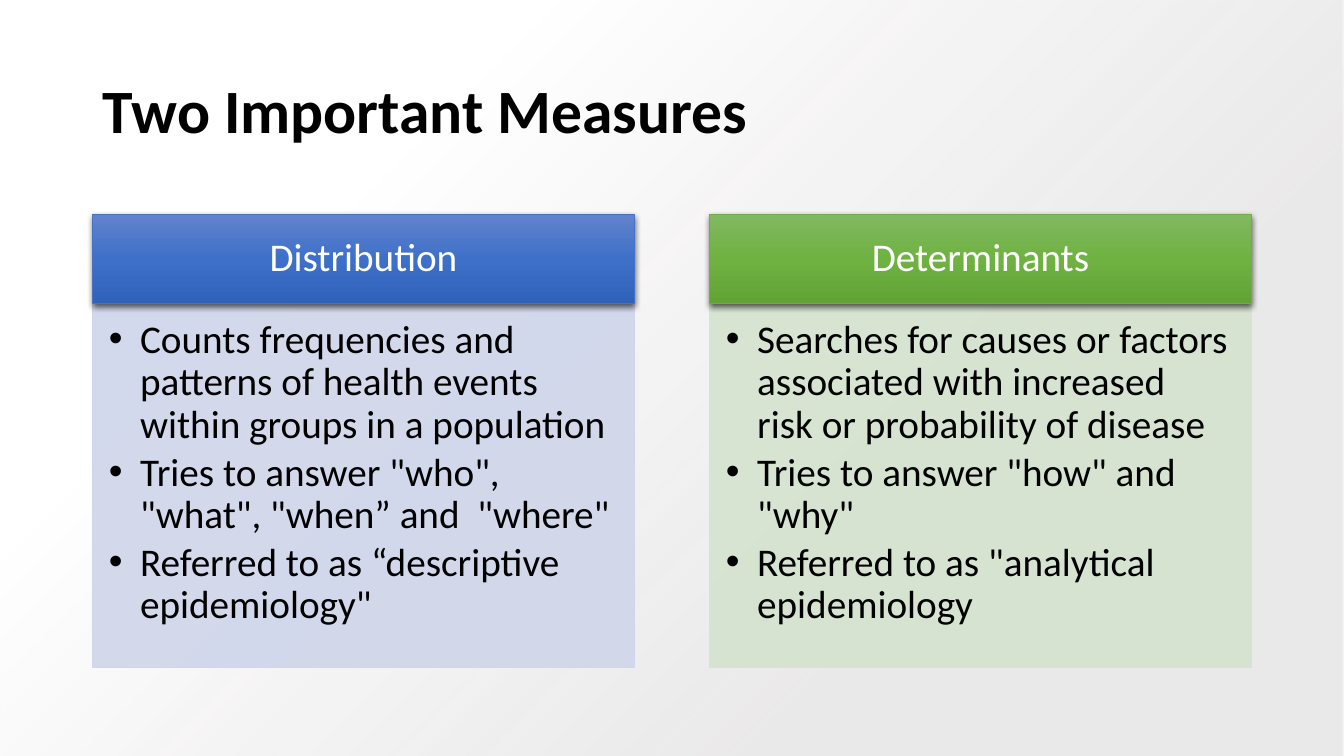
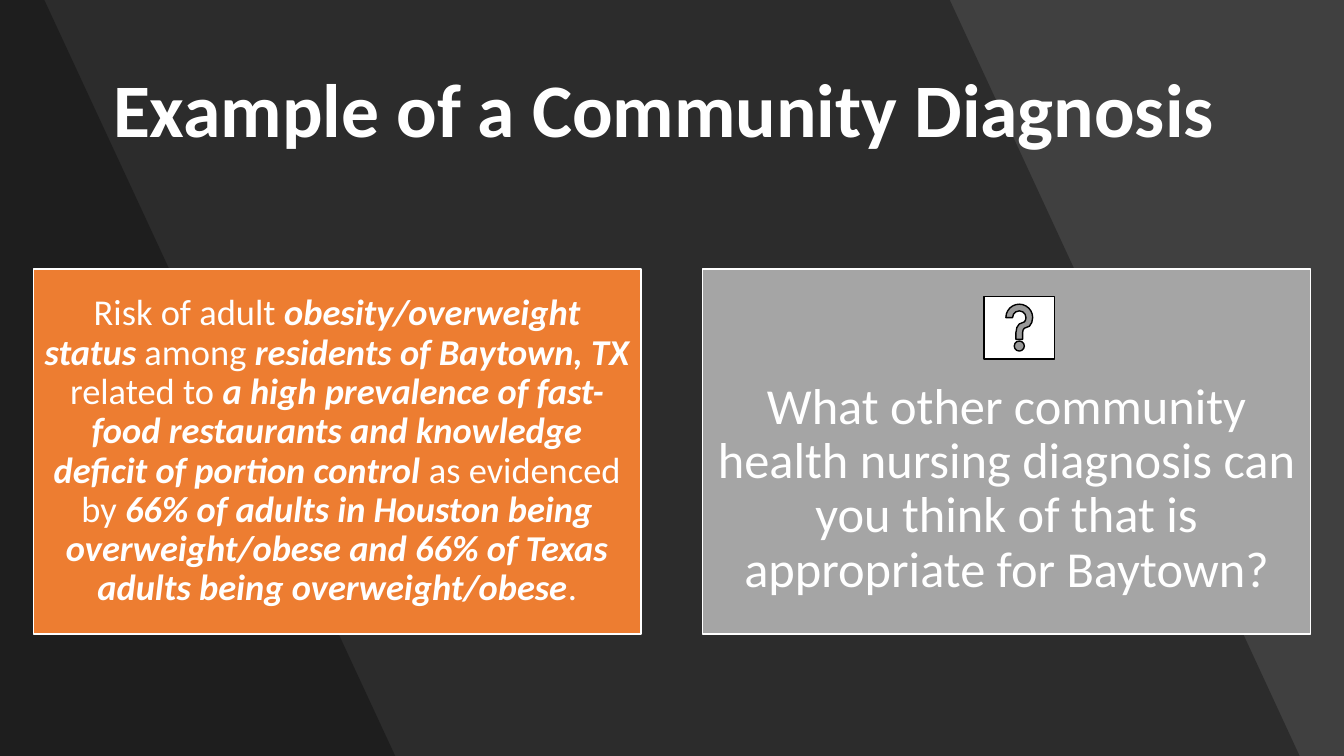
from dataclasses import dataclass

from lxml import etree
from pptx import Presentation
from pptx.dml.color import RGBColor
from pptx.enum.shapes import MSO_SHAPE as Preset
from pptx.enum.text import MSO_ANCHOR as Anchor, MSO_AUTO_SIZE as AutoSize, PP_ALIGN as Align
from pptx.oxml import parse_xml
from pptx.oxml.ns import nsdecls, qn
from pptx.util import Inches, Pt


@dataclass(frozen=True)
class Theme:
    font: str = "Calibri"
    black: str = "000000"
    white: str = "FFFFFF"
    mist: str = "E7E6E6"
    charcoal: str = "404040"
    orange: str = "ED7D31"
    gray: str = "A5A5A5"
    # Each column: header gradient, header line, body fill
    blue: tuple = (("6183CB", "3E70CA", "3062BB"), "4472C4", "CFD5EA")
    green: tuple = (("81B861", "6FB242", "62A336"), "70AD47", "D5E3CF")
    title_size: int = 44
    large_title_size: int = 54
    body_size: int = 28
    card_size: int = 26
    question_size: int = 36


THEME = Theme()
WIDTH, HEIGHT = 13.33, 7.5


def write(shape, paragraphs, size, color, bold=False, align=Align.LEFT,
          anchor=Anchor.MIDDLE, insets=(0.1, 0.05, 0.1, 0.05), after=0, hanging=None):
    """Fill a shape with paragraphs; odd pieces of a tuple are bold italic."""
    frame = shape.text_frame
    frame.auto_size = AutoSize.NONE
    frame.word_wrap = True
    frame.vertical_anchor = anchor
    (frame.margin_left, frame.margin_top,
     frame.margin_right, frame.margin_bottom) = map(Inches, insets)
    for index, pieces in enumerate(paragraphs):
        paragraph = frame.add_paragraph() if index else frame.paragraphs[0]
        paragraph.alignment = align
        paragraph.line_spacing = 0.9
        paragraph.space_before = Pt(0)
        paragraph.space_after = Pt(after)
        if hanging:
            properties = paragraph._p.get_or_add_pPr()
            properties.set("marL", str(Inches(hanging)))
            properties.set("indent", str(-Inches(hanging)))
        pieces = (pieces,) if isinstance(pieces, str) else pieces
        for number, text in enumerate(pieces):
            emphasised = number % 2 == 1
            run = paragraph.add_run()
            run.text = text
            font = run.font
            font.name, font.size = THEME.font, Pt(size)
            font.bold, font.italic = bold or emphasised, emphasised
            font.color.rgb = RGBColor.from_string(color)


class Deck:
    def __init__(self):
        self.presentation = Presentation()
        self.presentation.slide_width = Inches(WIDTH)
        self.presentation.slide_height = Inches(HEIGHT)
        self.slide = None

    def add_slide(self, layout, background):
        layouts = self.presentation.slide_layouts
        self.slide = self.presentation.slides.add_slide(layouts.get_by_name(layout))
        fill = self.slide.background.fill
        fill.solid()
        fill.fore_color.rgb = RGBColor.from_string(background)

    def place(self, shape, left, top, width, height):
        shape.left, shape.top = Inches(left), Inches(top)
        shape.width, shape.height = Inches(width), Inches(height)

    def paint(self, shape, fill, line=None, weight=0.5, opacity=100):
        shape.fill.solid()
        shape.fill.fore_color.rgb = RGBColor.from_string(fill)
        if opacity < 100:
            color = shape._element.spPr.find(qn("a:solidFill"))[0]
            etree.SubElement(color, qn("a:alpha"), val=str(opacity * 1000))
        if line:
            shape.line.color.rgb = RGBColor.from_string(line)
            shape.line.width = Pt(weight)
        else:
            shape.line.fill.background()
        shape.shadow.inherit = False

    def gradient(self, shape, stops, direction):
        """Swap the solid fill for stops of (position, colour, opacity)."""
        marks = "".join(
            f'<a:gs pos="{position * 1000}"><a:srgbClr val="{color}">'
            f'<a:alpha val="{opacity * 1000}"/></a:srgbClr></a:gs>'
            for position, color, opacity in stops)
        properties = shape._element.spPr
        properties.replace(properties.find(qn("a:solidFill")), parse_xml(
            f'<a:gradFill {nsdecls("a")} rotWithShape="1"><a:gsLst>{marks}</a:gsLst>'
            f'{direction}</a:gradFill>'))

    def drop_shadow(self, shape):
        shape._element.spPr.find(qn("a:effectLst")).append(parse_xml(
            f'<a:outerShdw {nsdecls("a")} blurRad="{Pt(4.5)}" dist="{Pt(1.5)}" '
            f'dir="5400000" algn="ctr" rotWithShape="0"><a:srgbClr val="{THEME.black}">'
            '<a:alpha val="63000"/></a:srgbClr></a:outerShdw>'))

    def send_behind_title(self, shape):
        self.slide.shapes.title._element.addprevious(shape._element)

    def title(self, text, size, color, align):
        title = self.slide.shapes.title
        self.place(title, 0.92, 0.4, 11.5, 1.45)
        write(title, [text], size, color, bold=True, align=align)

    def box(self, left, top, width, height, fill, line=None, weight=0.5,
            preset=Preset.RECTANGLE):
        shape = self.slide.shapes.add_shape(preset, *map(Inches, (left, top, width, height)))
        self.paint(shape, fill, line, weight)
        return shape

    def soft_backdrop(self):
        backdrop = self.box(0, 0, WIDTH, HEIGHT, THEME.white)
        self.gradient(backdrop, [(28, THEME.mist, 84), (74, THEME.white, 100)],
                      '<a:path path="circle"><a:fillToRect l="100000" t="100000"/></a:path>'
                      '<a:tileRect r="-100000" b="-100000"/>')
        self.send_behind_title(backdrop)

    def slanted_band(self, top_right, bottom_right):
        builder = self.slide.shapes.build_freeform(0, 0)
        corners = [(top_right, 0), (bottom_right, HEIGHT), (0, HEIGHT)]
        builder.add_line_segments([(Inches(x), Inches(y)) for x, y in corners])
        band = builder.convert_to_shape()
        self.paint(band, THEME.black, opacity=30)
        self.send_behind_title(band)

    def column(self, left, heading, items, palette, placeholder):
        shades, line, pale = palette
        width, top, header_height = 5.37, 2.13, 0.88
        body = self.slide.placeholders[placeholder]
        self.place(body, left, top + header_height, width, 3.61)
        self.paint(body, pale, pale, opacity=90)
        write(body, items, THEME.body_size, THEME.black, anchor=Anchor.TOP,
              insets=(0.16, 0.16, 0.22, 0.24), after=4, hanging=0.31)
        header = self.box(left, top, width, header_height, shades[1], line)
        self.gradient(header, [(50 * i, shade, 100) for i, shade in enumerate(shades)],
                      '<a:lin ang="5400000" scaled="0"/>')
        self.drop_shadow(header)
        write(header, [heading], THEME.body_size, THEME.white, align=Align.CENTER,
              insets=(0.22, 0.12, 0.22, 0.12))

    def card(self, left, text, fill, size, insets):
        card = self.box(left, 2.67, 6.03, 3.62, fill, THEME.white, 1)
        write(card, [text], size, THEME.white, align=Align.CENTER, insets=insets)


def measures_slide(deck):
    deck.add_slide("Two Content", THEME.white)
    deck.soft_backdrop()
    deck.title("Two Important Measures", THEME.title_size, THEME.black, Align.LEFT)
    columns = [
        ("Distribution", [
            "Counts frequencies and patterns of health events within groups in a population",
            'Tries to answer "who", "what", "when” and  "where"',
            'Referred to as “descriptive epidemiology"'], THEME.blue),
        ("Determinants", [
            "Searches for causes or factors associated with increased risk or "
            "probability of disease",
            'Tries to answer "how" and "why"',
            'Referred to as "analytical epidemiology'], THEME.green),
    ]
    for index, (heading, items, palette) in enumerate(columns):
        deck.column(0.92 + 6.12 * index, heading, items, palette, placeholder=index + 1)


def diagnosis_slide(deck):
    deck.add_slide("Title Only", THEME.charcoal)
    for top_right, bottom_right in [(9.42, 12.89), (0.44, 3.92)]:
        deck.slanted_band(top_right, bottom_right)
    deck.title("Example of a Community Diagnosis ", THEME.large_title_size,
               THEME.white, Align.CENTER)
    diagnosis = (
        "Risk of adult ", "obesity/overweight status ", "among ",
        "residents of Baytown, TX ", "related to ",
        "a high prevalence of fast-food restaurants and knowledge deficit of portion control",
        " as evidenced by ",
        "66% of adults in Houston being overweight/obese and 66% of Texas adults "
        "being overweight/obese", ".")
    deck.card(0.33, diagnosis, THEME.orange, THEME.card_size, (0.11,) * 4)
    # The question leaves room above for the help icon
    deck.card(6.97, "What other community health nursing diagnosis can you think of "
              "that is appropriate for Baytown?", THEME.gray, THEME.question_size,
              (0.15, 0.9, 0.15, 0.15))
    deck.box(9.76, 2.94, 0.7, 0.62, THEME.white, THEME.black, 1, Preset.ACTION_BUTTON_HELP)


def main():
    deck = Deck()
    measures_slide(deck)
    diagnosis_slide(deck)
    deck.presentation.save("out.pptx")


if __name__ == "__main__":
    main()
